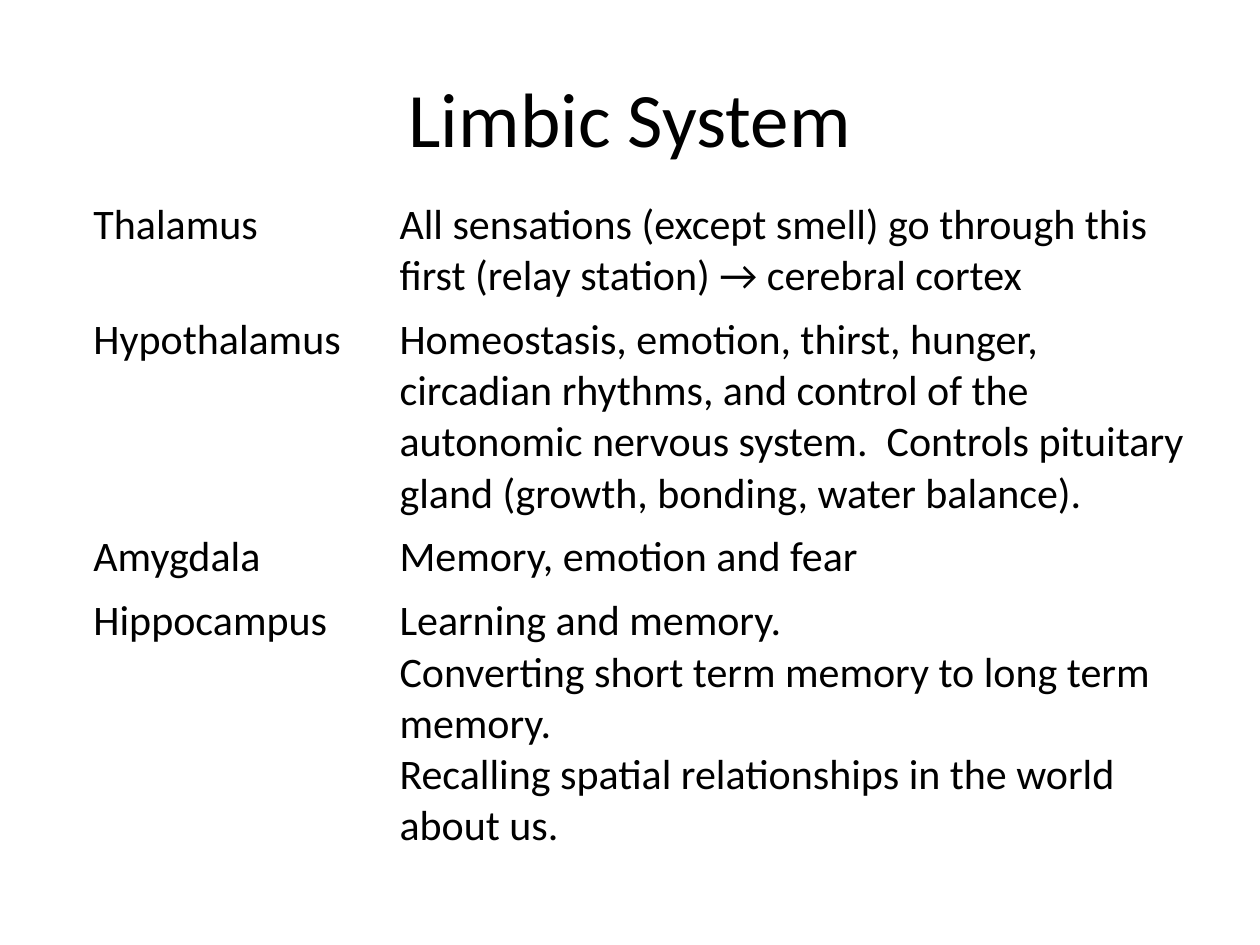
"""Build a slide that lists the parts of the limbic system and their roles."""
from pptx import Presentation
from pptx import util as u
from pptx.dml.color import RGBColor
from pptx.enum import text

BLACK = RGBColor(0, 0, 0)
FACE = "Calibri"
PARTS = [
    ("Thalamus", "All sensations (except smell) go through this first (relay station) → cerebral cortex"),
    ("Hypothalamus", "Homeostasis, emotion, thirst, hunger, circadian rhythms, and control of the "
     "autonomic nervous system.  Controls pituitary gland (growth, bonding, water balance)."),
    ("Amygdala", "Memory, emotion and fear"),
    ("Hippocampus", "Learning and memory.\nConverting short term memory to long term memory.\n"
     "Recalling spatial relationships in the world about us."),
    ("", ""),
]


def style(frame, size):
    for para in frame.paragraphs:
        for run in para.runs:
            for key, val in {"name": FACE, "size": u.Pt(size), "bold": False}.items():
                setattr(run.font, key, val)
            run.font.color.rgb = BLACK


deck = Presentation()
deck.slide_width, deck.slide_height = u.Cm(25.4), u.Cm(19.05)
slide = deck.slides.add_slide(deck.slide_layouts[6])

high = u.Cm(1.03)
table = slide.shapes.add_table(
    len(PARTS), 2, u.Cm(1.63), u.Cm(3.89), u.Cm(22.5), high * len(PARTS)).table
for key in ("first_row", "horz_banding"):
    setattr(table, key, False)
for col, wide in zip(table.columns, (6.17, 16.33)):
    col.width = u.Cm(wide)
for row, part in zip(table.rows, PARTS):
    row.height = high
    for cell, words in zip(row.cells, part):
        cell.fill.background()
        if words:
            cell.text_frame.text = words
            style(cell.text_frame, 24)

title = slide.shapes.add_textbox(u.Cm(1.27), u.Cm(0.76), u.Cm(22.86), u.Cm(3.18))
frame = title.text_frame
for key, val in {"word_wrap": True, "vertical_anchor": text.MSO_ANCHOR.MIDDLE,
                 "text": "Limbic System"}.items():
    setattr(frame, key, val)
frame.paragraphs[0].alignment = text.PP_ALIGN.CENTER
style(frame, 44)

deck.save("out.pptx")
